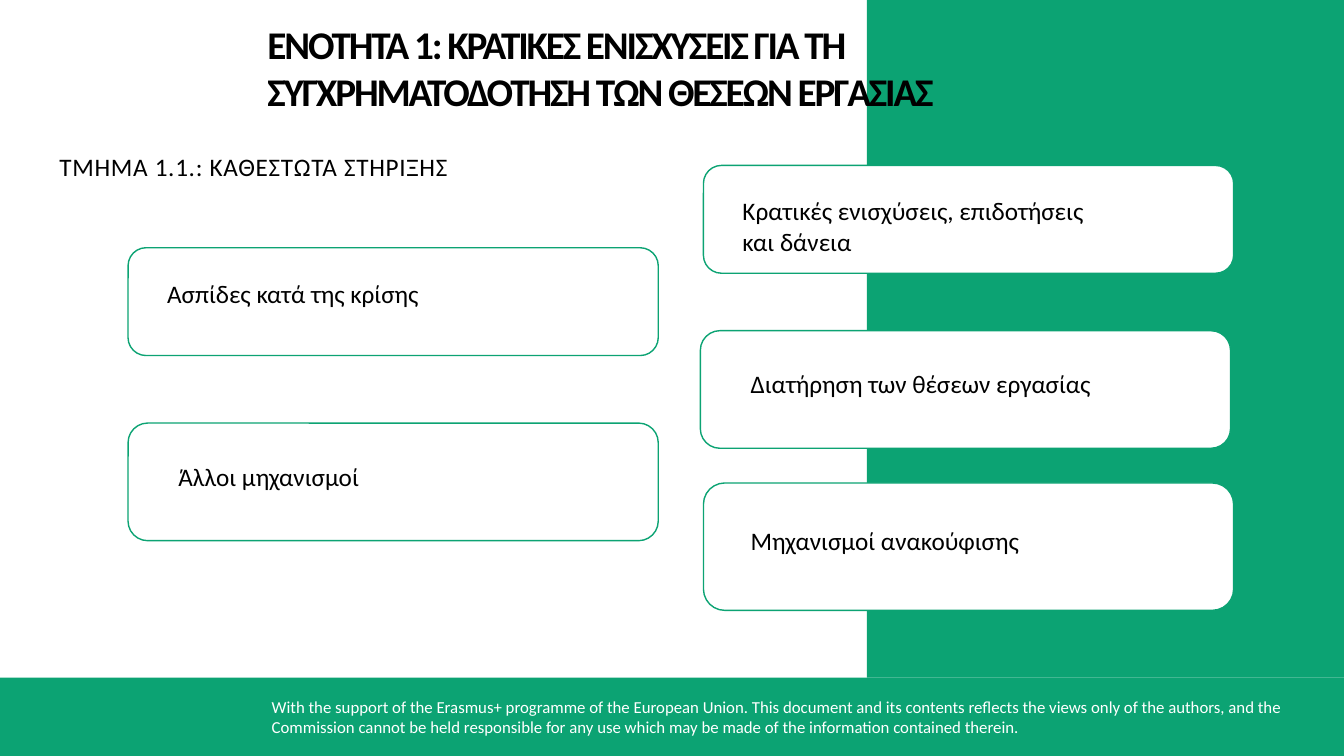
from pptx import Presentation
from pptx.dml.color import RGBColor
from pptx.enum.shapes import MSO_SHAPE as Shape
from pptx.util import Pt

GREEN, WHITE, BLACK = "0CA373", "FFFFFF", "000000"
WIDTH, HEIGHT = 960, 540
BAND_TOP, PANEL_LEFT = 484, 619.2
CARD_WIDTH, LABEL_WIDTH = 378.7, 278.6


def color(value):
    return RGBColor.from_string(value)


def write(tf, text, size=18, fill=BLACK, bold=False, spacing=None, before=0):
    p = tf.paragraphs[0]
    p.space_before = Pt(before)
    r = p.add_run()
    r.text = text
    r.font.name = "Calibri"
    r.font.size = Pt(size)
    r.font.bold = bold
    r.font.color.rgb = color(fill)
    if spacing is not None:
        r.font._element.set("spc", str(int(spacing * 100)))


class SlideBuilder:
    def __init__(self, slide, accent):
        self.slide = slide
        self.accent = accent

    def shape(self, kind, x, y, w, h, fill):
        sp = self.slide.shapes.add_shape(kind, Pt(x), Pt(y), Pt(w), Pt(h))
        sp.shadow.inherit = False
        sp.fill.solid()
        sp.fill.fore_color.rgb = color(fill)
        return sp

    def block(self, x, y, w, h):
        sp = self.shape(Shape.RECTANGLE, x, y, w, h, self.accent)
        sp.line.fill.background()

    def text(self, text, x, y, w, h, inset=None, **style):
        tf = self.slide.shapes.add_textbox(Pt(x), Pt(y), Pt(w), Pt(h)).text_frame
        tf.word_wrap = True
        if inset is not None:
            tf.margin_left = tf.margin_right = Pt(inset)
            tf.margin_top = tf.margin_bottom = Pt(inset)
        write(tf, text, **style)

    def card(self, text, x, y, h, dx, dy, label_height=51):
        sp = self.shape(Shape.ROUNDED_RECTANGLE, x, y, CARD_WIDTH, h, WHITE)
        sp.line.color.rgb = color(self.accent)
        sp.line.width = Pt(1)
        self.text(text, x + dx, y + dy, LABEL_WIDTH, label_height)


def main():
    prs = Presentation()
    prs.slide_width, prs.slide_height = Pt(WIDTH), Pt(HEIGHT)
    s = SlideBuilder(prs.slides.add_slide(prs.slide_layouts[6]), GREEN)

    # Footer band with disclaimer
    s.block(0, BAND_TOP, WIDTH, HEIGHT - BAND_TOP)
    s.text("With the support of the Erasmus+ programme of the European Union. "
           "This document and its contents reflects the views only of the authors, "
           "and the Commission cannot be held responsible for any use which may be "
           "made of the information contained therein.",
           187, 494, 750, 36, size=12, fill=WHITE)

    # Right panel
    s.block(PANEL_LEFT, 0, WIDTH - PANEL_LEFT, BAND_TOP)

    # Topic cards: text, left, top, height, label offset
    s.card("Κρατικές ενισχύσεις, επιδοτήσεις και δάνεια",
           502.5, 118.2, 77, 20.8, 18, label_height=73)
    for topic in (
        ("Διατήρηση των θέσεων εργασίας", 500.3, 236.2, 84, 28.8, 23),
        ("Μηχανισμοί ανακούφισης", 502.5, 345, 91, 26.6, 26.5),
        ("Ασπίδες κατά της κρίσης", 91.5, 177, 77, 20.8, 18),
        ("Άλλοι μηχανισμοί", 91.5, 302.2, 84, 28.8, 24),
    ):
        s.card(*topic)

    # Headings
    s.text("ΤΜΗΜΑ 1.1.: ΚΑΘΕΣΤΩΤΑ ΣΤΗΡΙΞΗΣ", 35.3, 104.7, 480, 52, spacing=0.5)
    s.text("ΕΝΟΤΗΤΑ 1: ΚΡΑΤΙΚΕΣ ΕΝΙΣΧΥΣΕΙΣ ΓΙΑ ΤΗ "
           "ΣΥΓΧΡΗΜΑΤΟΔΟΤΗΣΗ ΤΩΝ ΘΕΣΕΩΝ ΕΡΓΑΣΙΑΣ",
           191, 14.5, 646, 69, inset=0, size=28, bold=True, spacing=-1.5)

    prs.save("out.pptx")


if __name__ == "__main__":
    main()
